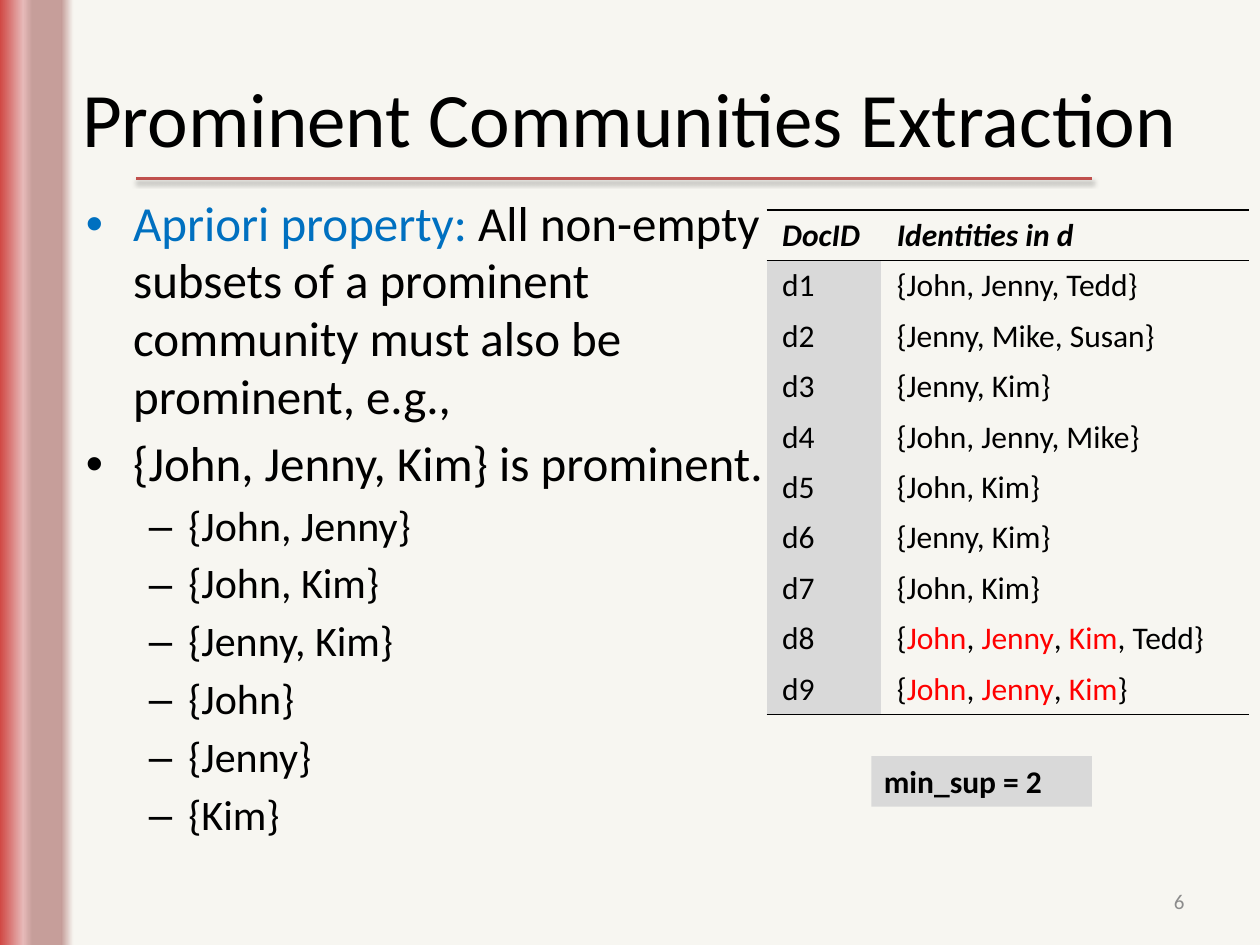
from dataclasses import dataclass

from lxml.etree import SubElement
from pptx import Presentation
from pptx.dml.color import RGBColor
from pptx.enum.shapes import MSO_CONNECTOR as Link, MSO_SHAPE as Shape
from pptx.enum.text import MSO_ANCHOR as Anchor, PP_ALIGN as Align
from pptx.oxml import parse_xml
from pptx.oxml.ns import nsdecls, qn
from pptx.util import Pt

BLACK = RGBColor(0, 0, 0)
BLUE = RGBColor(0x00, 0x70, 0xC0)
RED = RGBColor(0xFF, 0, 0)
GRAY = RGBColor(0xD9, 0xD9, 0xD9)
DIM = RGBColor(0x8C, 0x8C, 0x8C)
RULE = RGBColor(0xC0, 0x50, 0x4D)
PAPER = RGBColor(0xF7, 0xF6, 0xF1)
BAND = [  # percent across, colour
    (0, RGBColor(0xCE, 0x3B, 0x37)),
    (34, RGBColor(0xE6, 0xB9, 0xB8)),
    (46, RGBColor(0xC6, 0x9E, 0x9A)),
    (84, RGBColor(0xC4, 0x9C, 0x98)),
    (100, PAPER),
]
FONT = "Calibri"
NO_GRID = "{2D5ABB26-0587-4C30-8999-92F81FD0307C}"


@dataclass
class Run:
    text: str
    color: RGBColor = BLACK
    bold: bool = False
    italic: bool = False


@dataclass
class Item:
    runs: list[Run]
    level: int = 0


@dataclass
class Level:
    mark: str
    size: float
    left: float
    hang: float


LEVELS = [Level("•", 28, 27, 27), Level("–", 24, 58.5, 22.5)]

ITEMS = [
    Item([Run("Apriori property: ", BLUE),
          Run("All non-empty subsets of a prominent community must also be "
              "prominent, e.g.,")]),
    Item([Run("{John, Jenny, Kim} is prominent.")]),
] + [Item([Run(f"{{{names}}}")], 1) for names in (
    "John, Jenny", "John, Kim", "Jenny, Kim", "John", "Jenny", "Kim")]

DOCS = ["John, Jenny, Tedd", "Jenny, Mike, Susan", "Jenny, Kim",
        "John, Jenny, Mike", "John, Kim", "Jenny, Kim", "John, Kim",
        "John, Jenny, Kim, Tedd", "John, Jenny, Kim"]
GROUP = {"John", "Jenny", "Kim"}


def add_runs(para, runs: list[Run], size: float) -> None:
    for part in runs:
        run = para.add_run()
        run.text = part.text
        font = run.font
        font.name, font.size = FONT, Pt(size)
        font.bold, font.italic = part.bold, part.italic
        font.color.rgb = part.color


def add_text(slide, box: tuple, anchor=Anchor.TOP):
    frame = slide.shapes.add_textbox(*map(Pt, box)).text_frame
    frame.word_wrap = True
    frame.vertical_anchor = anchor
    return frame


def add_band(slide) -> None:
    band = slide.shapes.add_shape(Shape.RECTANGLE, Pt(-1.5), 0, Pt(43.5), Pt(540))
    band.shadow.inherit = False
    band.line.fill.background()
    stops = "".join(f'<a:gs pos="{at * 1000}"><a:srgbClr val="{color}"/></a:gs>'
                    for at, color in BAND)
    grad = parse_xml(f'<a:gradFill {nsdecls("a")} rotWithShape="1"><a:gsLst>{stops}'
                     '</a:gsLst><a:lin ang="0" scaled="0"/></a:gradFill>')
    band._element.spPr.find(qn("a:prstGeom")).addnext(grad)


def add_rule(slide) -> None:
    rule = slide.shapes.add_connector(
        Link.STRAIGHT, Pt(78), Pt(102), Pt(624), Pt(102))
    rule.line.color.rgb = RULE
    rule.line.width = Pt(2)
    rule._element.spPr.append(parse_xml(
        f'<a:effectLst {nsdecls("a")}><a:outerShdw blurRad="{Pt(3.1)}" '
        f'dist="{Pt(1.6)}" dir="5400000" rotWithShape="0"><a:srgbClr val="000000">'
        '<a:alpha val="38000"/></a:srgbClr></a:outerShdw></a:effectLst>'))


def add_list(slide, items: list[Item]) -> None:
    frame = add_text(slide, (42, 108, 402, 402))
    for i, item in enumerate(items):
        para = frame.add_paragraph() if i else frame.paragraphs[0]
        level = LEVELS[item.level]
        para.level = item.level
        para.line_spacing = 0.98
        para.space_before = Pt(level.size * 0.2)
        props = para._p.get_or_add_pPr()
        props.set("marL", str(Pt(level.left)))
        props.set("indent", str(-Pt(level.hang)))
        SubElement(props, qn("a:buFont")).set("typeface", "Arial")
        SubElement(props, qn("a:buChar")).set("char", level.mark)
        add_runs(para, item.runs, level.size)


def add_edge(cell, side: str) -> None:
    cell._tc.get_or_add_tcPr().insert(0, parse_xml(
        f'<a:{side} {nsdecls("a")} w="{Pt(1)}"><a:solidFill>'
        f'<a:srgbClr val="{BLACK}"/></a:solidFill></a:{side}>'))


def doc_runs(names: str) -> list[Run]:
    parts = names.split(", ")
    if not GROUP <= set(parts):
        return [Run(f"{{{names}}}")]
    runs = [Run("{")]
    for i, name in enumerate(parts):
        if i:
            runs.append(Run(", "))
        runs.append(Run(name, RED if name in GROUP else BLACK))
    return runs + [Run("}")]


def add_docs(slide) -> None:
    rows = [[[Run(text, bold=True, italic=True)]
             for text in ("DocID", "Identities in d")]]
    rows += [[[Run(f"d{i}")], doc_runs(names)] for i, names in enumerate(DOCS, 1)]
    table = slide.shapes.add_table(
        len(rows), 2, Pt(438), Pt(120), Pt(276), Pt(288)).table
    table._tbl.tblPr.find(qn("a:tableStyleId")).text = NO_GRID
    table.first_row = table.horz_banding = False
    for col, width in zip(table.columns, (65.5, 210.5)):
        col.width = Pt(width)
    for r, row in enumerate(rows):
        for c, runs in enumerate(row):
            cell = table.cell(r, c)
            cell.margin_left = cell.margin_right = Pt(9)
            add_runs(cell.text_frame.paragraphs[0], runs, 18)
            if r and c == 0:
                cell.fill.solid()
                cell.fill.fore_color.rgb = GRAY
            else:
                cell.fill.background()
            if r in (0, len(rows) - 1):
                add_edge(cell, "lnB")
            if r == 0:
                add_edge(cell, "lnT")


def main() -> None:
    deck = Presentation()
    deck.slide_width, deck.slide_height = Pt(720), Pt(540)
    slide = deck.slides.add_slide(deck.slide_layouts[5])
    slide.background.fill.solid()
    slide.background.fill.fore_color.rgb = PAPER

    # Side band and rule under the title
    add_band(slide)
    add_rule(slide)

    # Title
    title = slide.shapes.title
    title.left, title.top, title.width, title.height = map(Pt, (36, 21.6, 648, 90))
    title.text_frame.vertical_anchor = Anchor.MIDDLE
    para = title.text_frame.paragraphs[0]
    para.alignment = Align.CENTER
    add_runs(para, [Run("Prominent Communities Extraction")], 44)

    # Bullets and page number
    add_list(slide, ITEMS)
    para = add_text(slide, (516, 500.5, 168, 28.8), Anchor.MIDDLE).paragraphs[0]
    para.alignment = Align.RIGHT
    add_runs(para, [Run("6", DIM)], 12)

    # Documents and support threshold
    add_docs(slide)
    note = slide.shapes.add_shape(
        Shape.RECTANGLE, Pt(498), Pt(432), Pt(126), Pt(29))
    note.shadow.inherit = False
    note.fill.solid()
    note.fill.fore_color.rgb = GRAY
    note.line.fill.background()
    para = note.text_frame.paragraphs[0]
    para.alignment = Align.LEFT
    add_runs(para, [Run("min_sup = 2", bold=True)], 18)

    deck.save("out.pptx")


if __name__ == "__main__":
    main()
